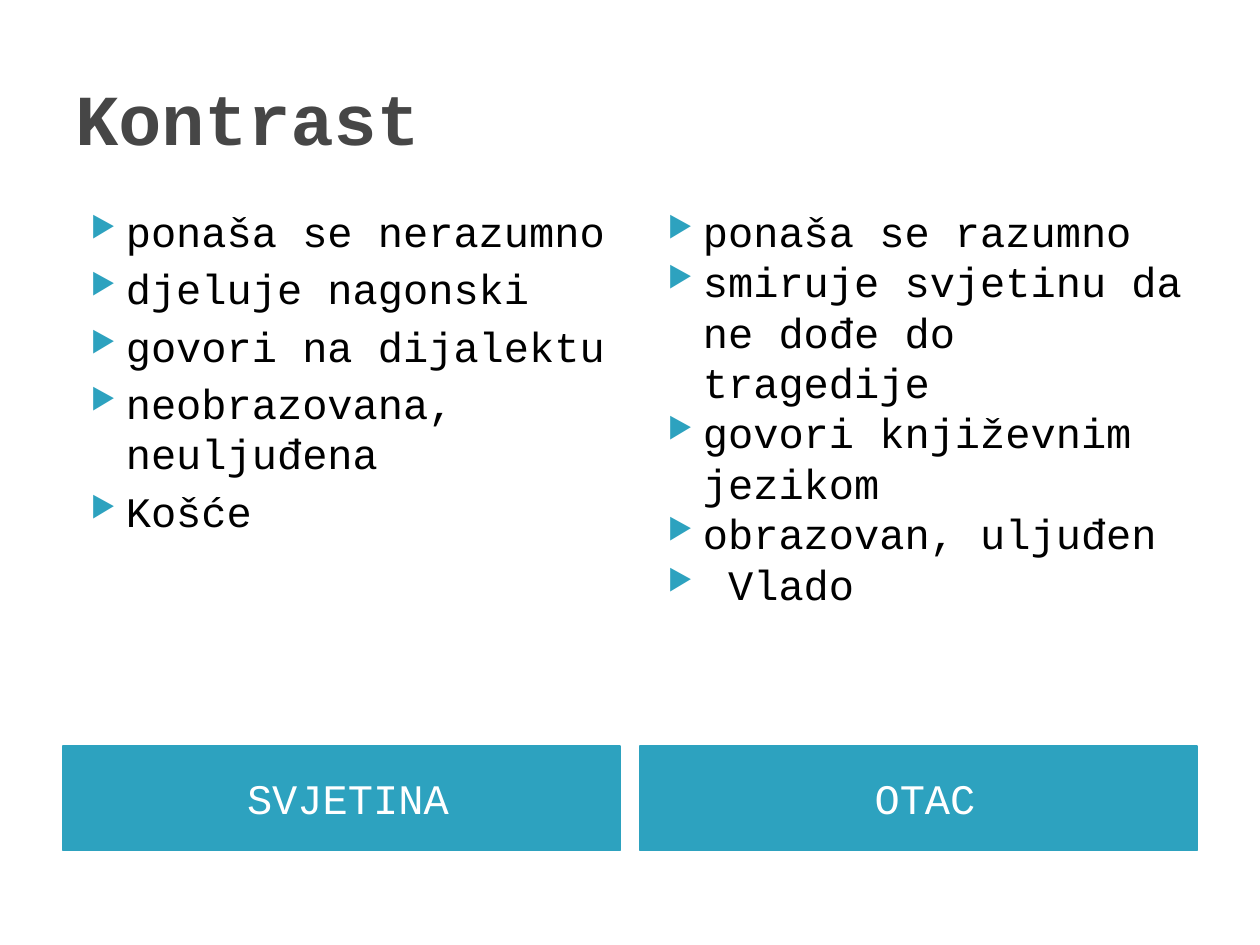
from lxml.etree import SubElement
from pptx import Presentation
from pptx.dml.color import RGBColor
from pptx.enum.shapes import MSO_SHAPE
from pptx.enum.text import MSO_ANCHOR, PP_ALIGN
from pptx.oxml.ns import qn
from pptx.util import Inches, Pt

COLORS = {"title": "464646", "accent": "2DA2BF", "text": "000000", "label": "FFFFFF"}
FONT = "Courier New"
MARGIN, COLUMN_WIDTH, COLUMN_STEP = 0.5, 4.42, 4.58

# Label, space before each later point, points
COLUMNS = [
    ("SVJETINA", 4, [
        "ponaša se nerazumno",
        "djeluje nagonski",
        "govori na dijalektu",
        "neobrazovana, neuljuđena",
        "Košće",
    ]),
    ("OTAC", 0, [
        "ponaša se razumno",
        "smiruje svjetinu da ne dođe do tragedije",
        "govori književnim jezikom",
        "obrazovan, uljuđen",
        " Vlado",
    ]),
]


def color(name):
    return RGBColor.from_string(COLORS[name])


def set_font(paragraph, size, color_name, bold=False):
    font = paragraph.font
    font.name, font.size, font.bold = FONT, Pt(size), bold
    font.color.rgb = color(color_name)


def add_bullet(paragraph):
    properties = paragraph._p.get_or_add_pPr()
    properties.set("marL", str(Inches(0.4)))
    properties.set("indent", str(Inches(-0.28)))
    bullet_color = SubElement(properties, qn("a:buClr"))
    SubElement(bullet_color, qn("a:srgbClr"), val=COLORS["accent"])
    SubElement(properties, qn("a:buSzPct"), val="68000")
    SubElement(properties, qn("a:buChar"), char="▶")


def add_text_frame(slide, left, top, width, height):
    box = slide.shapes.add_textbox(Inches(left), Inches(top), Inches(width), Inches(height))
    box.text_frame.word_wrap = True
    return box.text_frame


def add_title(slide, text):
    frame = add_text_frame(slide, MARGIN, 0.3, 9, 1.25)
    frame.vertical_anchor = MSO_ANCHOR.MIDDLE
    title = frame.paragraphs[0]
    title.text = text
    set_font(title, 41, "title", bold=True)


def add_points(slide, left, points, gap):
    frame = add_text_frame(slide, left, 1.58, COLUMN_WIDTH, 4.31)
    for index, text in enumerate(points):
        point = frame.add_paragraph() if index else frame.paragraphs[0]
        point.text = text
        add_bullet(point)
        point.space_before = Pt(gap if index else 0)
        set_font(point, 24, "text")


def add_label(slide, left, text):
    bar = slide.shapes.add_shape(MSO_SHAPE.RECTANGLE, Inches(left), Inches(5.92),
                                 Inches(COLUMN_WIDTH), Inches(0.83))
    bar.shadow.inherit = False
    bar.fill.solid()
    bar.fill.fore_color.rgb = color("accent")
    bar.line.color.rgb = color("accent")
    bar.line.width = Pt(0.75)
    frame = bar.text_frame
    frame.word_wrap = True
    frame.margin_left = Inches(0.2)
    frame.vertical_anchor = MSO_ANCHOR.MIDDLE
    label = frame.paragraphs[0]
    label.text = text
    label.alignment = PP_ALIGN.CENTER
    set_font(label, 24, "label")


def main():
    deck = Presentation()
    deck.slide_width, deck.slide_height = Inches(10), Inches(7.5)
    slide = deck.slides.add_slide(deck.slide_layouts[6])

    add_title(slide, "Kontrast")

    # Contrasted characters, side by side
    for index, (name, gap, points) in enumerate(COLUMNS):
        left = MARGIN + index * COLUMN_STEP
        add_label(slide, left, name)
        add_points(slide, left, points, gap)

    deck.save("out.pptx")


if __name__ == "__main__":
    main()
